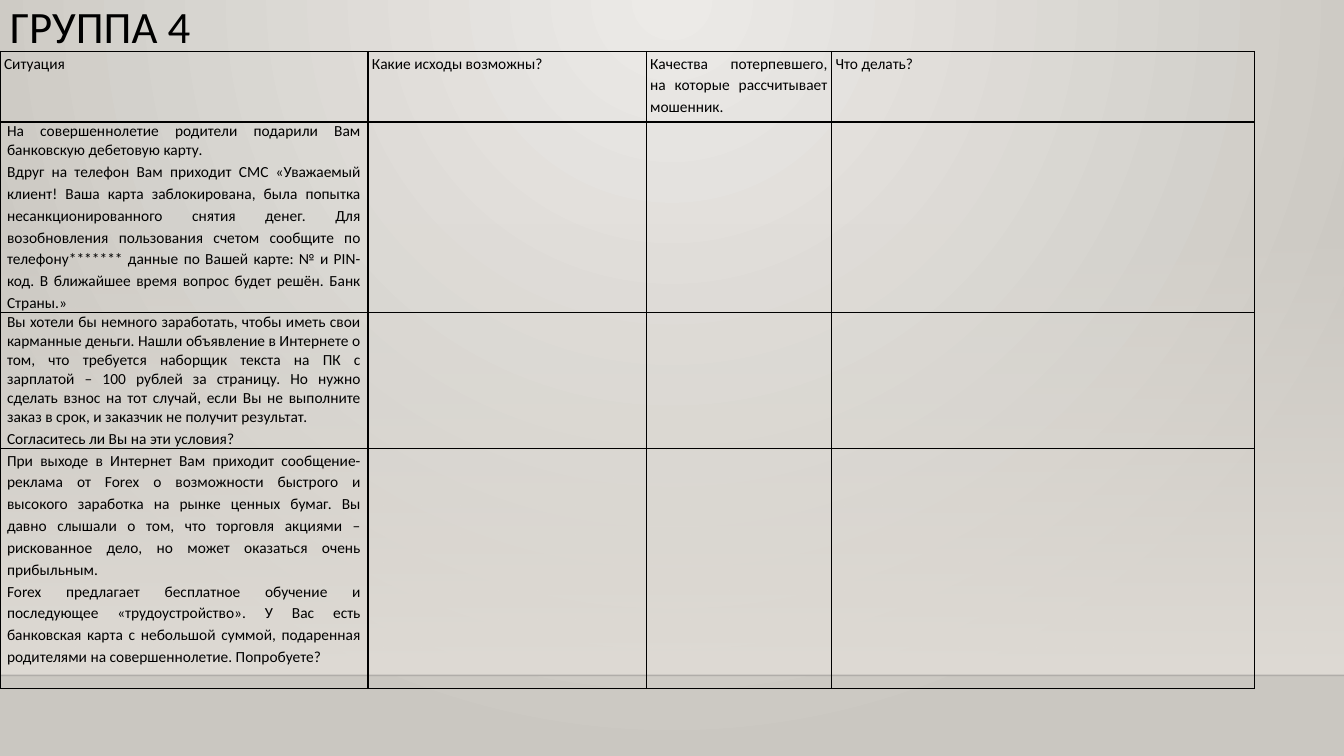
from lxml.etree import SubElement
from pptx import Presentation
from pptx.dml.color import RGBColor
from pptx.enum.shapes import MSO_CONNECTOR, MSO_SHAPE
from pptx.enum.text import MSO_ANCHOR, PP_ALIGN
from pptx.oxml import parse_xml
from pptx.oxml.ns import nsdecls, qn
from pptx.util import Inches, Pt

BLACK = RGBColor(0x00, 0x00, 0x00)
LIGHT = RGBColor(0xEC, 0xEA, 0xE7)
SHADE = RGBColor(0xCA, 0xC7, 0xC1)
SAND = RGBColor(0xDF, 0xDB, 0xD5)
HORIZON = RGBColor(0x00, 0x00, 0x01)


def set_alpha(fill_el, percents):
    """Set the opacity of each colour inside a fill, in order."""
    for color, percent in zip(fill_el.iter(qn("a:srgbClr")), percents):
        SubElement(color, qn("a:alpha")).set("val", str(percent * 1000))


class Deck:
    """Style and current slide; lengths are percentages of the slide's size."""
    font = "Calibri"

    def __init__(self):
        self.prs = Presentation()
        self.prs.slide_width, self.prs.slide_height = Inches(13.33), Inches(7.5)
        self.s = self.prs.slides.add_slide(self.prs.slide_layouts[6])

    def x(self, percent):
        return round(self.prs.slide_width * percent / 100)

    def y(self, percent):
        return round(self.prs.slide_height * percent / 100)

    def box(self, left, top, width, height):
        return self.x(left), self.y(top), self.x(width), self.y(height)

    def gradient(self, fill, *colors):
        fill.gradient()
        for stop, color in zip(fill.gradient_stops, colors):
            stop.color.rgb = color

    def background(self, inner, outer):
        self.gradient(self.s.background.fill, inner, outer)
        lin = next(self.s.element.iter(qn("a:lin")))
        lin.getparent().replace(lin, parse_xml(
            f'<a:path {nsdecls("a")} path="circle">'
            '<a:fillToRect l="43000" t="0" r="43000" b="100000"/></a:path>'))

    def fade(self, color, *area):
        sp = self.s.shapes.add_shape(MSO_SHAPE.RECTANGLE, *self.box(*area))
        sp.shadow.inherit = False
        self.gradient(sp.fill, color, color)
        sp.fill.gradient_angle = 270
        set_alpha(sp._element.spPr.find(qn("a:gradFill")), (0, 100))
        sp.line.fill.background()

    def rule(self, top, color, opacity):
        line = self.s.shapes.add_connector(
            MSO_CONNECTOR.STRAIGHT, 0, self.y(top), self.x(100), self.y(top))
        line.line.width = Pt(1)
        line.line.color.rgb = color
        set_alpha(line._element.spPr.find(qn("a:ln")), (opacity,))
        SubElement(line._element.spPr, qn("a:effectLst"))

    def paragraph(self, p, text, size, spacing, align):
        p.text = text
        p.alignment, p.line_spacing = align, spacing
        p.font.name, p.font.size, p.font.color.rgb = self.font, Pt(size), BLACK

    def title(self, text, *area):
        tf = self.s.shapes.add_textbox(*self.box(*area)).text_frame
        tf.word_wrap = True
        self.paragraph(tf.paragraphs[0], text, 32, 0.9, PP_ALIGN.LEFT)

    def cell(self, cell, paragraphs, inset):
        cell.margin_left = cell.margin_right = Inches(inset)
        cell.margin_top = cell.margin_bottom = 0
        cell.vertical_anchor = MSO_ANCHOR.TOP
        tcPr = cell._tc.get_or_add_tcPr()
        for side in "LRTB":
            tcPr.append(parse_xml(
                f'<a:ln{side} {nsdecls("a")} w="{Pt(1)}"><a:solidFill>'
                f'<a:srgbClr val="{BLACK}"/></a:solidFill></a:ln{side}>'))
        cell.fill.background()
        tf = cell.text_frame
        for i, (text, spacing) in enumerate(paragraphs):
            p = tf.add_paragraph() if i else tf.paragraphs[0]
            self.paragraph(p, text, 11, spacing, PP_ALIGN.JUSTIFY)

    def table(self, left, top, widths, heights, headings, situations):
        table = self.s.shapes.add_table(
            len(heights), len(widths),
            *self.box(left, top, sum(widths), sum(heights))).table
        table.first_row = table.horz_banding = False
        for column, width in zip(table.columns, widths):
            column.width = self.x(width)
        for row, height in zip(table.rows, heights):
            row.height = self.y(height)
        for c, heading in enumerate(headings):
            self.cell(table.cell(0, c), [(heading, 1.15)], 0.04)
        for r, situation in enumerate(situations, 1):
            for c in range(len(widths)):
                self.cell(table.cell(r, c), [("", 1.0)] if c else situation, 0.07)


HEADINGS = [
    "Ситуация",
    "Какие исходы возможны?",
    "Качества потерпевшего, на которые рассчитывает мошенник.",
    "Что делать?",
]

# Each situation: paragraphs with their line spacing
SITUATIONS = [
    [("На совершеннолетие родители подарили Вам банковскую дебетовую карту.", 1.0),
     ("Вдруг на телефон Вам приходит СМС «Уважаемый клиент! Ваша карта "
      "заблокирована, была попытка несанкционированного снятия денег. Для "
      "возобновления пользования счетом сообщите по телефону******* данные по "
      "Вашей карте: № и PIN-код. В ближайшее время вопрос будет решён. "
      "Банк Страны.»", 1.15)],
    [("Вы хотели бы немного заработать, чтобы иметь свои карманные деньги. Нашли "
      "объявление в Интернете о том, что требуется наборщик текста на ПК с "
      "зарплатой – 100 рублей за страницу. Но нужно сделать взнос на тот случай, "
      "если Вы не выполните заказ в срок, и заказчик не получит результат.", 1.0),
     ("Согласитесь ли Вы на эти условия?", 1.15)],
    [("При выходе в Интернет Вам приходит сообщение-реклама от Forex о возможности "
      "быстрого и высокого заработка на рынке ценных бумаг. Вы давно слышали о "
      "том, что торговля акциями – рискованное дело, но может оказаться очень "
      "прибыльным.", 1.15),
     ("Forex предлагает бесплатное обучение и последующее «трудоустройство». У Вас "
      "есть банковская карта с небольшой суммой, подаренная родителями на "
      "совершеннолетие. Попробуете?", 1.15)],
]


def main():
    deck = Deck()

    # Backdrop: glowing wall, floor and the line between them
    deck.background(LIGHT, SHADE)
    deck.fade(SAND, 0, 29.47, 100, 59.87)
    deck.rule(89.33, HORIZON, 20)

    # Title and worksheet
    deck.title("ГРУППА 4", 0, 0, 86.27, 19.33)
    deck.table(0, 6.8, [27.38, 20.7, 13.8, 31.46], [9.33, 25.2, 18, 31.75],
               HEADINGS, SITUATIONS)

    deck.prs.save("out.pptx")


if __name__ == "__main__":
    main()
